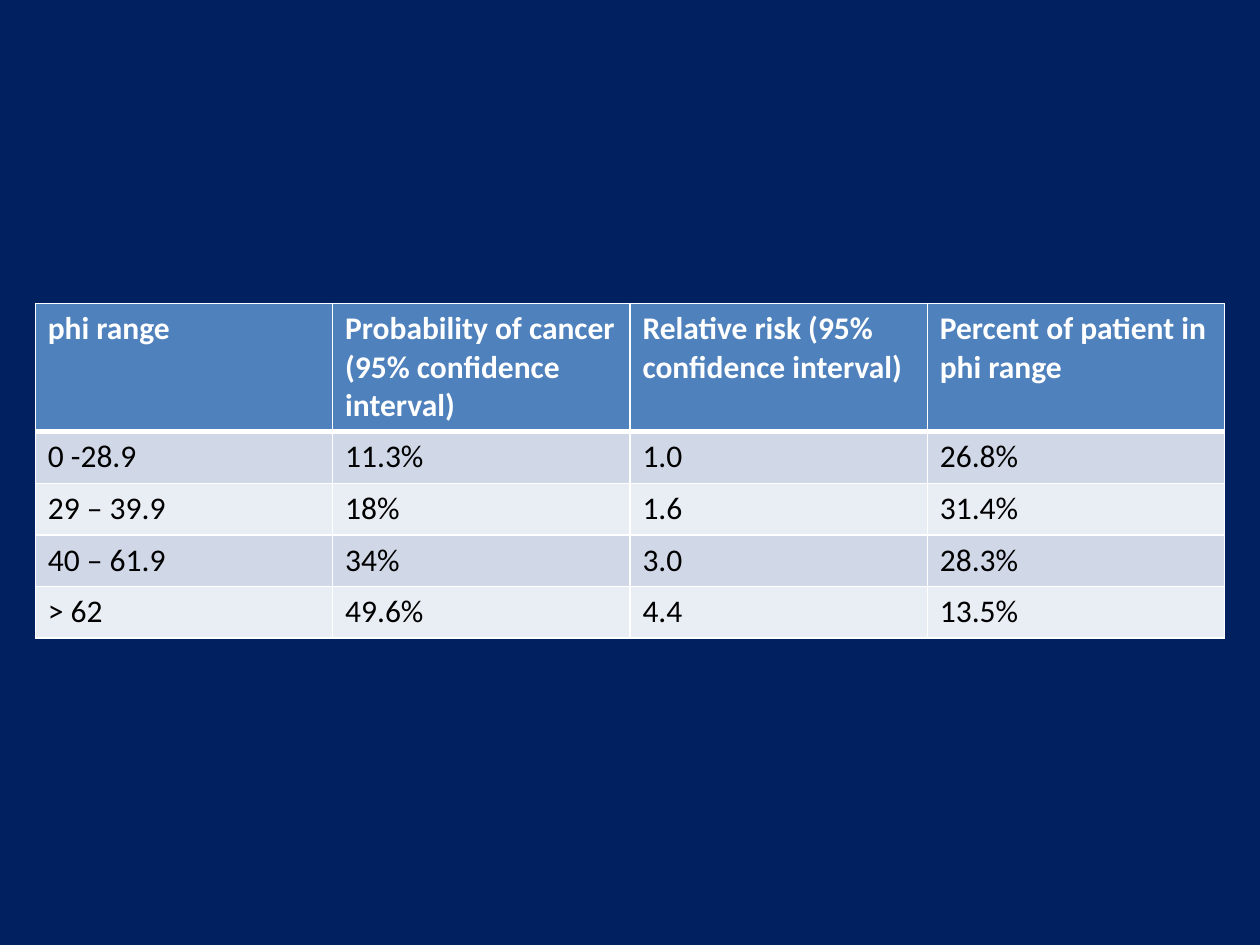
from lxml.etree import SubElement
from pptx import Presentation
from pptx.dml.color import RGBColor
from pptx.oxml.ns import qn
from pptx.util import Inches, Pt


def color(hex_value):
    return RGBColor.from_string(hex_value)


def add_border(cell, side, width):
    line = SubElement(cell._tc.get_or_add_tcPr(), qn(f"a:{side}"), w=str(Pt(width)))
    fill = SubElement(line, qn("a:solidFill"))
    SubElement(fill, qn("a:srgbClr"), val="FFFFFF")


risk_rows = [
    ["phi range", "Probability of cancer (95% confidence interval)",
     "Relative risk (95% confidence interval)", "Percent of patient in phi range"],
    ["0 -28.9", "11.3%", "1.0", "26.8%"],
    ["29 – 39.9", "18%", "1.6", "31.4%"],
    ["40 – 61.9", "34%", "3.0", "28.3%"],
    ["> 62", "49.6%", "4.4", "13.5%"],
]
header_height, row_height, column_width = 1.01, 0.41, 2.36
band_fills = ["E9EDF4", "D0D8E8"]

prs = Presentation()
prs.slide_width, prs.slide_height = Inches(10), Inches(7.5)
slide = prs.slides.add_slide(prs.slide_layouts[6])

# Background
slide.background.fill.solid()
slide.background.fill.fore_color.rgb = color("002060")

# Risk table grid
risk_table = slide.shapes.add_table(
    len(risk_rows), len(risk_rows[0]), Inches(0.28), Inches(2.41),
    Inches(4 * column_width), Inches(header_height + 4 * row_height)).table
for column in risk_table.columns:
    column.width = Inches(column_width)
for i, row in enumerate(risk_table.rows):
    row.height = Inches(row_height if i else header_height)

# Cell text, borders and fills
for i, values in enumerate(risk_rows):
    is_header = i == 0
    font_format = {"name": "Calibri", "size": Pt(18), "bold": is_header}
    borders = {"lnL": 1, "lnR": 1, "lnT": 3 if i == 1 else 1,
               "lnB": 3 if is_header else 1}
    for j, value in enumerate(values):
        cell = risk_table.cell(i, j)
        cell.text = value
        font = cell.text_frame.paragraphs[0].runs[0].font
        for attribute, setting in font_format.items():
            setattr(font, attribute, setting)
        font.color.rgb = color("FFFFFF" if is_header else "000000")
        for side, width in borders.items():
            add_border(cell, side, width)
        cell.fill.solid()
        cell.fill.fore_color.rgb = color("4F81BD" if is_header else band_fills[i % 2])

prs.save("out.pptx")
